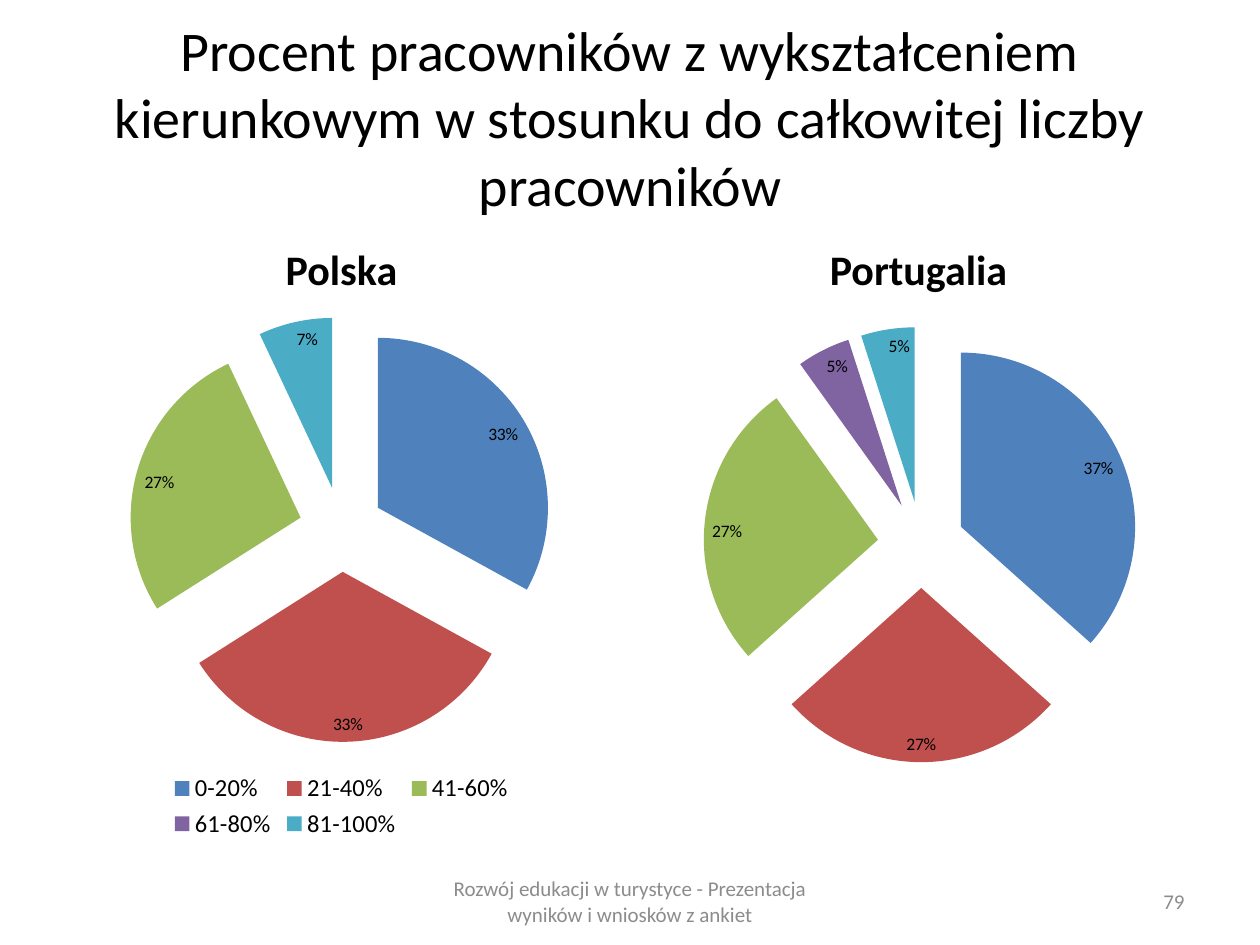
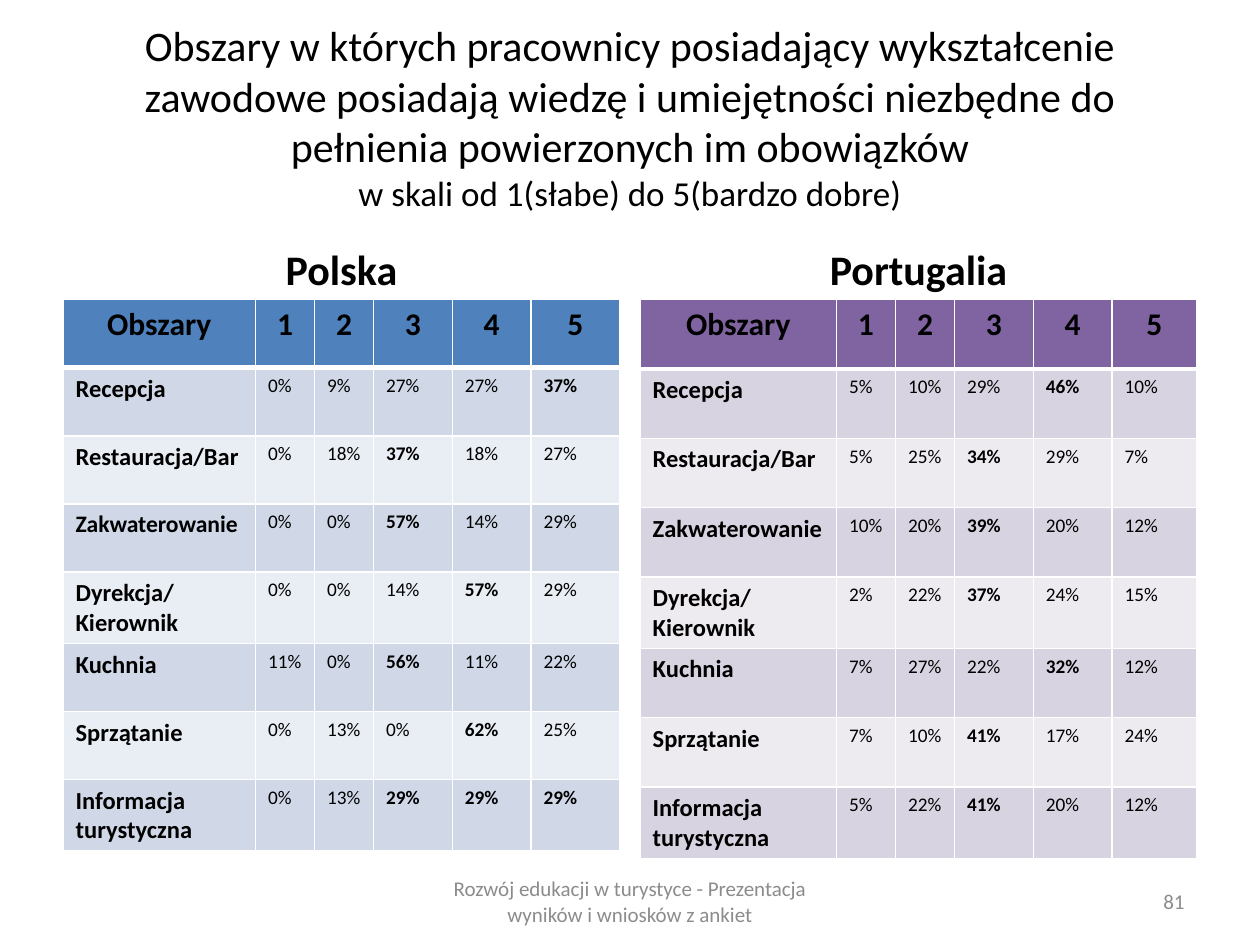
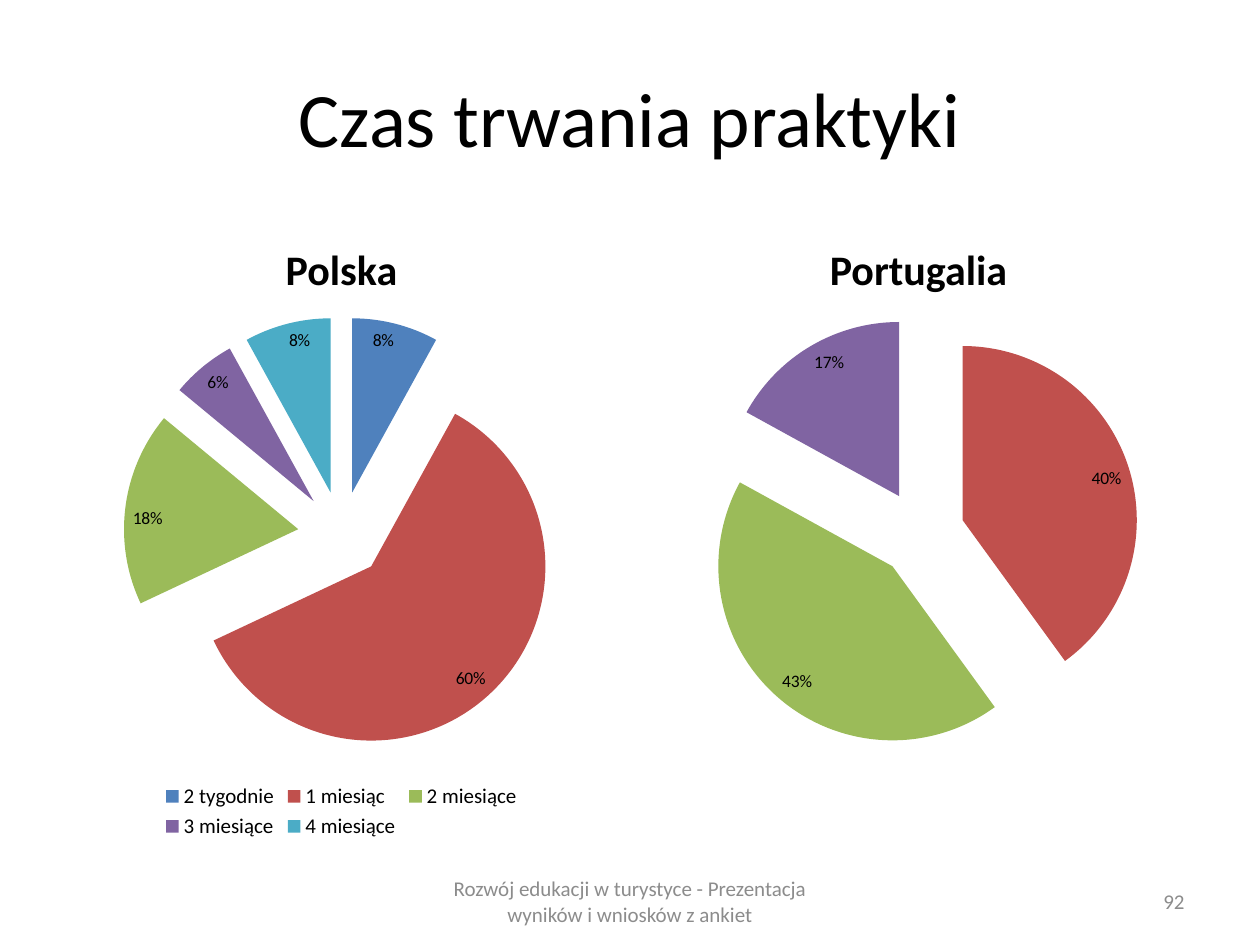
from lxml import etree
from pptx import Presentation
from pptx import util as u
from pptx.chart.data import CategoryChartData
from pptx.dml.color import RGBColor
from pptx.enum import chart as charts, text
from pptx.oxml.ns import qn

BLACK = RGBColor(0, 0, 0)
GRAY = RGBColor(0x8C, 0x8C, 0x8C)
BLUE = RGBColor(0x4F, 0x81, 0xBD)
RED = RGBColor(0xC0, 0x50, 0x4D)
GREEN = RGBColor(0x9B, 0xBB, 0x59)
PURPLE = RGBColor(0x80, 0x64, 0xA2)
TEAL = RGBColor(0x4B, 0xAC, 0xC6)
BLUE_BANDS = RGBColor(0xD0, 0xD8, 0xE8), RGBColor(0xE9, 0xED, 0xF4)
PURPLE_BANDS = RGBColor(0xD8, 0xD3, 0xE0), RGBColor(0xED, 0xEA, 0xF0)
SLICE_COLORS = BLUE, RED, GREEN, PURPLE, TEAL
FONT = "Calibri"

FOOTER = "Rozwój edukacji w turystyce - Prezentacja wyników i wniosków z ankiet"
COUNTRIES = "Polska", "Portugalia"
COLUMN_LEFTS = 36, 365.75
COLUMN_WIDTH = 318.25
CONTENT_TOP = 171.25
CHART_HEIGHT = 311
CENTER, RIGHT = text.PP_ALIGN.CENTER, text.PP_ALIGN.RIGHT
MIDDLE, BOTTOM = text.MSO_ANCHOR.MIDDLE, text.MSO_ANCHOR.BOTTOM

RANKS = "1", "2", "3", "4", "5"
TABLE_HEAD = ("Obszary",) + RANKS

EDUCATION = {
    "number": 79,
    "title": [("Procent pracowników z wykształceniem kierunkowym w stosunku do całkowitej liczby pracowników", 32)],
    "pies": [
        {"categories": ["0-20%", "21-40%", "41-60%", "61-80%", "81-100%"],
         "values": [0.33, 0.33, 0.27, 0, 0.07], "legend_size": 14},
        {"categories": RANKS, "values": [0.37, 0.27, 0.27, 0.05, 0.05],
         "layout": (0.1, 0.05, 0.81, 0.8)},
    ],
}
SKILLS = {
    "number": 81,
    "title": [
        ("Obszary w których pracownicy posiadający wykształcenie zawodowe posiadają wiedzę i umiejętności "
         "niezbędne do pełnienia powierzonych im obowiązków", 24),
        ("w skali od 1(słabe) do 5(bardzo dobre)", 20),
    ],
    "tables": [
        {"head_color": BLUE, "bands": BLUE_BANDS, "row_height": 38.9,
         "widths": (110, 33.75, 33.75, 45, 45, 50.75),
         "small_label": ("Zakwaterowanie", 13.5),
         "rows": [
             ("Recepcja", 0, 9, 27, 27, 37),
             ("Restauracja/Bar", 0, 18, 37, 18, 27),
             ("Zakwaterowanie", 0, 0, 57, 14, 29),
             ("Dyrekcja/\nKierownik", 0, 0, 14, 57, 29),
             ("Kuchnia", 11, 0, 56, 11, 22),
             ("Sprzątanie", 0, 13, 0, 62, 25),
             ("Informacja turystyczna", 0, 13, 29, 29, 29),
         ]},
        {"head_color": PURPLE, "bands": PURPLE_BANDS, "row_height": 39.6,
         "widths": (112.25, 33.75, 33.75, 45, 45, 48.5),
         "rows": [
             ("Recepcja", 5, 10, 29, 46, 10),
             ("Restauracja/Bar", 5, 25, 34, 29, 7),
             ("Zakwaterowanie", 10, 20, 39, 20, 12),
             ("Dyrekcja/ Kierownik", 2, 22, 37, 24, 15),
             ("Kuchnia", 7, 27, 22, 32, 12),
             ("Sprzątanie", 7, 10, 41, 17, 24),
             ("Informacja turystyczna", 5, 22, 41, 20, 12),
         ]},
    ],
}
INTERNSHIP = {
    "number": 92,
    "title": [("Czas trwania praktyki", 44)],
    "pies": [
        {"categories": ["2 tygodnie", "1 miesiąc", "2 miesiące", "3 miesiące", "4 miesiące"],
         "values": [0.08, 0.6, 0.18, 0.06, 0.08], "legend_size": 12},
        {"categories": RANKS, "values": [0, 0.4, 0.43, 0.17, 0],
         "layout": (0.1, 0.03, 0.81, 0.8)},
    ],
}


def set_font(font, size, color=BLACK, bold=False):
    font.name = FONT
    font.size = u.Pt(size)
    font.bold = bold
    font.color.rgb = color


def add_span(para, words, size, color=BLACK, bold=False):
    span = para.add_run()
    span.text = words
    set_font(span.font, size, color, bold)


def add_text(page, left, top, width, height, lines, align=CENTER, anchor=MIDDLE, color=BLACK, bold=False):
    box = page.shapes.add_textbox(u.Pt(left), u.Pt(top), u.Pt(width), u.Pt(height))
    frame = box.text_frame
    frame.word_wrap = True
    frame.vertical_anchor = anchor
    para = frame.paragraphs[0]
    para.alignment = align
    for index, (words, size) in enumerate(lines):
        if index:
            para.add_line_break()
        add_span(para, words, size, color, bold)


def set_plot_layout(chart, layout):
    plot_area = chart.plots[0]._element.getparent()
    for old_layout in plot_area.findall(qn("c:layout")):
        plot_area.remove(old_layout)
    holder = etree.Element(qn("c:layout"))
    manual = etree.SubElement(holder, qn("c:manualLayout"))
    settings = [("layoutTarget", "inner"), ("xMode", "edge"), ("yMode", "edge")]
    settings += zip("xywh", layout)
    for tag, value in settings:
        etree.SubElement(manual, qn("c:" + tag)).set("val", str(value))
    plot_area.insert(0, holder)


def add_pie(page, left, pie):
    data = CategoryChartData(number_format="0%")
    data.categories = pie["categories"]
    data.add_series("Series 1", pie["values"])
    chart = page.shapes.add_chart(
        charts.XL_CHART_TYPE.PIE, u.Pt(left), u.Pt(CONTENT_TOP),
        u.Pt(COLUMN_WIDTH), u.Pt(CHART_HEIGHT), data).chart
    set_font(chart.font, 10)
    chart.has_title = False
    chart.has_legend = "legend_size" in pie
    if chart.has_legend:
        chart.legend.position = charts.XL_LEGEND_POSITION.BOTTOM
        chart.legend.include_in_layout = False
        set_font(chart.legend.font, pie["legend_size"])
    if "layout" in pie:
        set_plot_layout(chart, pie["layout"])

    plot = chart.plots[0]
    plot.vary_by_categories = True
    series = plot.series[0]
    explosion = etree.Element(qn("c:explosion"))
    explosion.set("val", "25")
    series._element.find(qn("c:tx")).addnext(explosion)
    for index, color in enumerate(SLICE_COLORS):
        fill = series.points[index].format.fill
        fill.solid()
        fill.fore_color.rgb = color

    plot.has_data_labels = True
    labels = plot.data_labels
    labels.show_value = True
    labels.show_percentage = False
    labels.number_format = "0%;;"
    labels.number_format_is_linked = False
    labels.position = charts.XL_LABEL_POSITION.INSIDE_END
    set_font(labels.font, 10)


def set_borders(cell, top, bottom):
    properties = cell._tc.get_or_add_tcPr()
    edges = ("lnL", 1), ("lnR", 1), ("lnT", top), ("lnB", bottom)
    for index, (tag, width) in enumerate(edges):
        line = etree.Element(qn("a:" + tag), w=str(u.Pt(width)))
        solid = etree.SubElement(line, qn("a:solidFill"))
        etree.SubElement(solid, qn("a:srgbClr"), val="FFFFFF")
        properties.insert(index, line)


def fill_cell(cell, words, size, color, bold, align=None):
    cell.fill.solid()
    cell.fill.fore_color.rgb = color
    frame = cell.text_frame
    for index, line in enumerate(words.split("\n")):
        para = frame.add_paragraph() if index else frame.paragraphs[0]
        para.alignment = align
        add_span(para, line, size, bold=bold)


def add_score_table(page, left, content):
    rows = content["rows"]
    row_height = content["row_height"]
    table = page.shapes.add_table(
        len(rows) + 1, len(TABLE_HEAD), u.Pt(left), u.Pt(CONTENT_TOP),
        u.Pt(COLUMN_WIDTH), u.Pt(row_height * (len(rows) + 1))).table
    for column, width in zip(table.columns, content["widths"]):
        column.width = u.Pt(width)
    for row in table.rows:
        row.height = u.Pt(row_height)

    for column, words in enumerate(TABLE_HEAD):
        cell = table.cell(0, column)
        fill_cell(cell, words, 18, content["head_color"], True, CENTER)
        set_borders(cell, 1, 3)

    label_sizes = dict([content["small_label"]]) if "small_label" in content else {}
    for index, (label, *scores) in enumerate(rows):
        color = content["bands"][index % 2]
        best = max(scores)
        fill_cell(table.cell(index + 1, 0), label, label_sizes.get(label, 14), color, True)
        for column, score in enumerate(scores, 1):
            fill_cell(table.cell(index + 1, column), f"{score}%", 11, color, score == best)
        for column in range(len(TABLE_HEAD)):
            set_borders(table.cell(index + 1, column), 1 if index else 3, 1)


def add_page(deck, content):
    page = deck.slides.add_slide(deck.slide_layouts[6])
    add_text(page, 36, 21.6, 648, 90, content["title"])
    for left, country in zip(COLUMN_LEFTS, COUNTRIES):
        add_text(page, left, 121, COLUMN_WIDTH, 50.4, [(country, 24)], anchor=BOTTOM, bold=True)
    for left, pie in zip(COLUMN_LEFTS, content.get("pies", [])):
        add_pie(page, left, pie)
    for left, scores in zip(COLUMN_LEFTS, content.get("tables", [])):
        add_score_table(page, left, scores)
    add_text(page, 246, 500.5, 228, 28.8, [(FOOTER, 12)], color=GRAY)
    add_text(page, 516, 500.5, 168, 28.8, [(str(content["number"]), 12)], align=RIGHT, color=GRAY)


def main():
    deck = Presentation()
    deck.slide_width, deck.slide_height = u.Pt(720), u.Pt(540)
    for content in (EDUCATION, SKILLS, INTERNSHIP):
        add_page(deck, content)
    deck.save("out.pptx")


if __name__ == "__main__":
    main()
